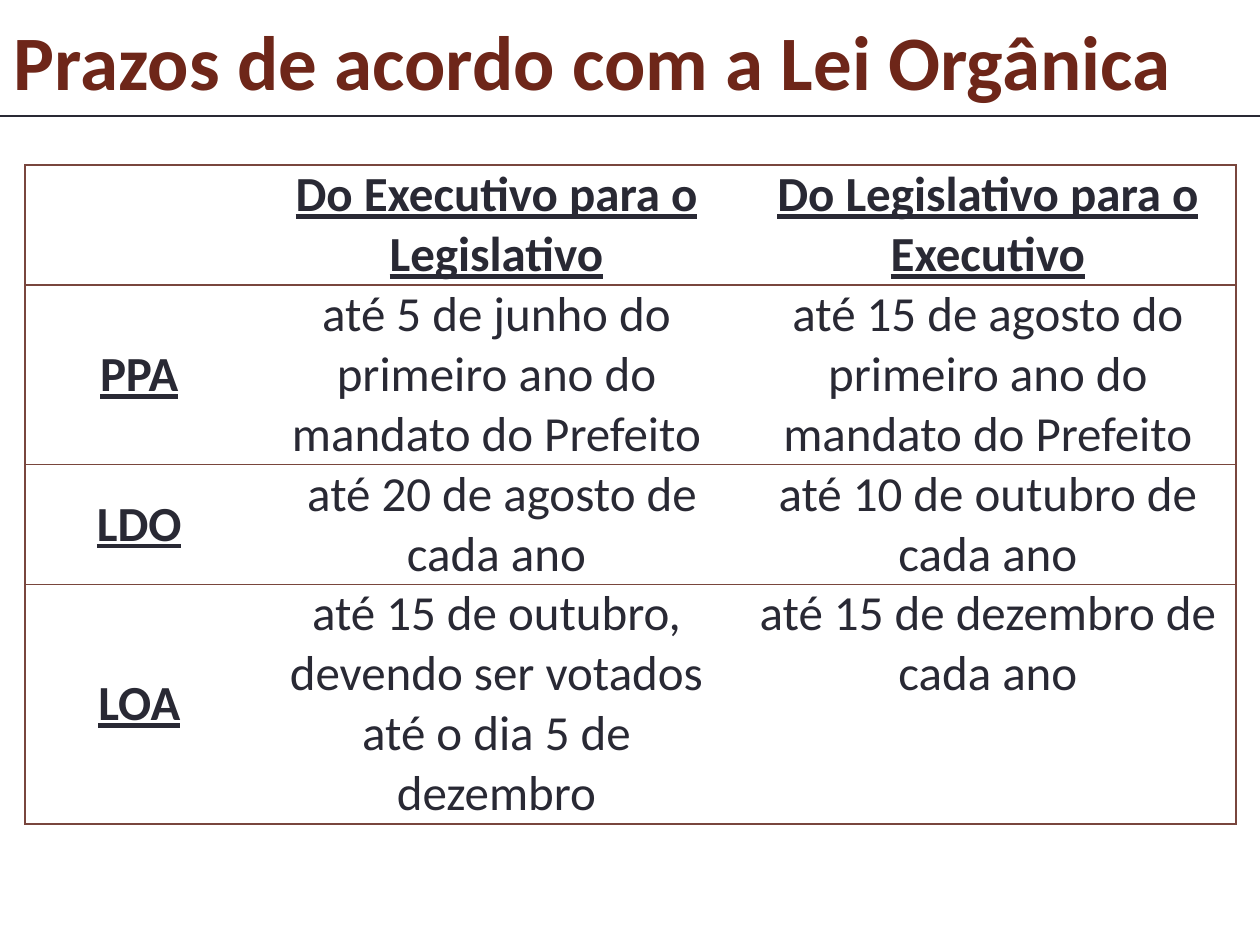
from dataclasses import dataclass

from lxml import etree
from pptx import Presentation
from pptx import util as u
from pptx.dml.color import RGBColor
from pptx.enum import text
from pptx.oxml import ns


@dataclass(frozen=True)
class Theme:
    font: str = "Calibri"
    title_color: str = "6E2619"
    text_color: str = "292934"
    border_color: str = "79463D"
    cell_fill: str = "FFFFFF"
    title_size: int = 44
    table_size: int = 28
    border_width: float = 1
    rule_width: float = 0.75


@dataclass(frozen=True)
class Deadline:
    label: str
    to_legislative: str
    to_executive: str
    lines: int

    def texts(self) -> tuple[str, str, str]:
        return self.label, self.to_legislative, self.to_executive


THEME = Theme()
WIDTH, HEIGHT = u.Inches(10), u.Inches(7.5)
COLUMNS = (1.81, 3.86, 3.94)
LINE_HEIGHT = 0.47
ROWS = (
    Deadline("", "Do Executivo para o Legislativo", "Do Legislativo para o Executivo", 2),
    Deadline("PPA", "até 5 de junho do primeiro ano do mandato do Prefeito",
             "até 15 de agosto do primeiro ano do mandato do Prefeito", 3),
    Deadline("LDO", "\u00a0até 20 de agosto de cada ano".replace("\u00a0", " "),
             "até 10 de outubro de cada ano", 2),
    Deadline("LOA", "até 15 de outubro, devendo ser votados até o dia 5 de dezembro",
             "até 15 de dezembro de cada ano", 4),
)


def format_runs(paragraph, size: float, color: str, bold: bool, underline: bool = False) -> None:
    for run in paragraph.runs:
        run.font.name = THEME.font
        run.font.size = u.Pt(size)
        run.font.color.rgb = RGBColor.from_string(color)
        run.font.bold = bold
        run.font.underline = underline


def set_borders(cell, visible: dict[str, bool]) -> None:
    properties = cell._tc.get_or_add_tcPr()
    for position, (side, shown) in enumerate(visible.items()):
        line = etree.Element(ns.qn(f"a:ln{side}"), w=str(u.Pt(THEME.border_width)))
        properties.insert(position, line)
        if shown:
            fill = etree.SubElement(line, ns.qn("a:solidFill"))
            etree.SubElement(fill, ns.qn("a:srgbClr"), val=THEME.border_color)
        else:
            etree.SubElement(line, ns.qn("a:noFill"))


def add_title(slide, content: str) -> None:
    title = slide.shapes.title
    title.left, title.top = u.Inches(0.01), u.Inches(-0.04)
    title.width, title.height = u.Inches(9.95), u.Inches(1.03)
    frame = title.text_frame
    frame.text = content
    frame.word_wrap = True
    frame.auto_size = text.MSO_AUTO_SIZE.NONE
    frame.vertical_anchor = text.MSO_ANCHOR.MIDDLE
    paragraph = frame.paragraphs[0]
    paragraph.alignment = text.PP_ALIGN.LEFT
    format_runs(paragraph, THEME.title_size, THEME.title_color, True)


def add_rule(slide, top: int) -> None:
    rule = slide.shapes.add_connector(1, 0, top, WIDTH, top)
    rule.line.color.rgb = RGBColor.from_string(THEME.text_color)
    rule.line.width = u.Pt(THEME.rule_width)
    etree.SubElement(rule._element.spPr, ns.qn("a:effectLst"))


def fill_cell(cell, content: str, row: int, column: int) -> None:
    heading = row == 0 or column == 0
    cell.margin_left = cell.margin_right = u.Inches(0.07)
    cell.margin_top = cell.margin_bottom = 0
    cell.vertical_anchor = text.MSO_ANCHOR.MIDDLE if column == 0 else text.MSO_ANCHOR.TOP
    cell.fill.solid()
    cell.fill.fore_color.rgb = RGBColor.from_string(THEME.cell_fill)
    set_borders(cell, {"L": column == 0, "R": column == len(COLUMNS) - 1, "T": True, "B": True})
    paragraph = cell.text_frame.paragraphs[0]
    paragraph.text = content
    paragraph.alignment = text.PP_ALIGN.CENTER
    format_runs(paragraph, THEME.table_size, THEME.text_color, heading, heading)


def add_deadlines(slide) -> None:
    height = LINE_HEIGHT * sum(row.lines for row in ROWS)
    table = slide.shapes.add_table(
        len(ROWS), len(COLUMNS), u.Inches(0.2), u.Inches(1.31),
        u.Inches(sum(COLUMNS)), u.Inches(height)).table
    table.first_row = table.horz_banding = False
    for column, width in zip(table.columns, COLUMNS):
        column.width = u.Inches(width)
    for row_index, deadline in enumerate(ROWS):
        table.rows[row_index].height = u.Inches(LINE_HEIGHT * deadline.lines)
        for column_index, content in enumerate(deadline.texts()):
            fill_cell(table.cell(row_index, column_index), content, row_index, column_index)


def main() -> None:
    presentation = Presentation()
    presentation.slide_width, presentation.slide_height = WIDTH, HEIGHT
    slide = presentation.slides.add_slide(presentation.slide_layouts[5])
    add_deadlines(slide)
    add_title(slide, "Prazos de acordo com a Lei Orgânica")
    add_rule(slide, u.Inches(0.92))
    presentation.save("out.pptx")


if __name__ == "__main__":
    main()
